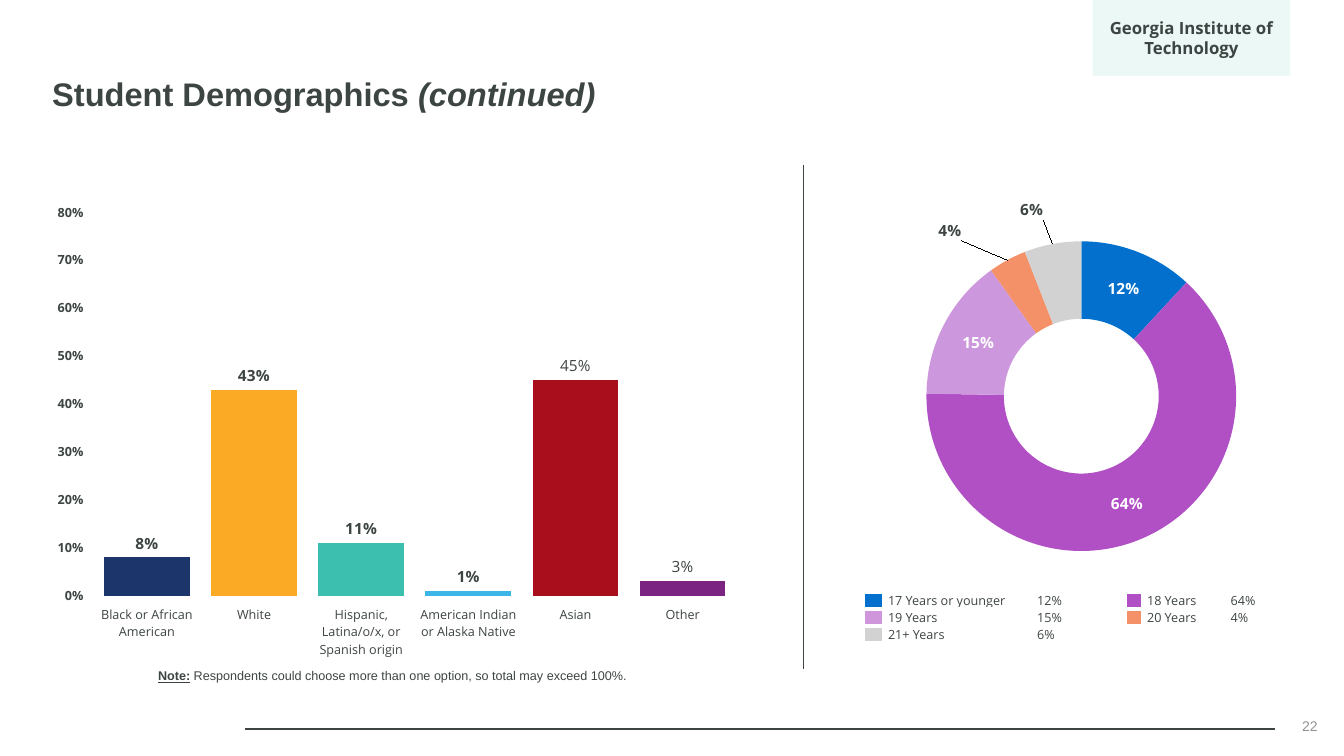
from dataclasses import dataclass, field

from lxml.etree import SubElement
from pptx import Presentation
from pptx.chart.data import CategoryChartData
from pptx.dml.color import RGBColor
from pptx.enum.chart import XL_CHART_TYPE as ChartType, XL_LABEL_POSITION as LabelPlace
from pptx.enum.shapes import MSO_CONNECTOR as Connector, MSO_SHAPE as Preset
from pptx.enum.text import MSO_ANCHOR as Anchor, MSO_AUTO_SIZE as AutoSize, PP_ALIGN as Align
from pptx.oxml import parse_xml
from pptx.oxml.ns import nsdecls, qn
from pptx.util import Inches, Pt

COLORS = {
    "ink": "3D4542", "footer": "3D4543", "number": "929493", "white": "FFFFFF",
    "mint": "3CC0AF", "navy": "1C356B", "gold": "FBAA26", "teal": "3CBFAE",
    "sky": "3CB6E6", "red": "A90E1C", "plum": "7B2481", "blue": "0370CD",
    "purple": "B150C4", "lilac": "CC97DC", "lilac_key": "D096DC",
    "orange": "F59168", "gray": "D2D2D2",
}
SANS = "Open Sans"
ARIAL = "Arial"
CELL = Inches(0.1)


@dataclass
class Area:
    left: float
    top: float
    width: float
    height: float

    def emu(self) -> tuple:
        return tuple(grid(n) for n in (self.left, self.top, self.width, self.height))


@dataclass
class Span:
    text: str
    bold: bool | None = None
    italic: bool | None = None
    underline: bool | None = None


@dataclass
class Caption:
    area: Area
    spans: list
    size: float
    color: str = "ink"
    bold: bool = False
    align: Align = Align.LEFT
    anchor: Anchor = Anchor.TOP
    spacing: float = 1.0


@dataclass
class Rule:
    start: tuple
    end: tuple
    color: str
    weight: float


@dataclass
class Slice:
    name: str
    value: float
    color: str
    label_color: str = "white"
    bold: bool = True
    shift: tuple = ()


@dataclass
class Graph:
    kind: ChartType
    area: Area
    plot: tuple
    slices: list = field(default_factory=list)


@dataclass
class Key:
    color: str
    name: str
    share: str


def grid(count: float) -> int:
    return round(count * CELL)


def rgb(name: str) -> RGBColor:
    return RGBColor.from_string(COLORS[name])


def set_font(font, face: str, size: float, color: str = "ink", bold: bool = False) -> None:
    font.name, font.size, font.bold = face, Pt(size), bold
    font.color.rgb = rgb(color)


def add_caption(page, caption: Caption) -> None:
    box = page.shapes.add_textbox(*caption.area.emu())
    frame = box.text_frame
    frame.word_wrap = True
    frame.auto_size = AutoSize.NONE
    frame.vertical_anchor = caption.anchor
    para = frame.paragraphs[0]
    para.alignment, para.line_spacing = caption.align, caption.spacing
    set_font(para.font, ARIAL, caption.size, caption.color, caption.bold)
    for span in caption.spans:
        run = para.add_run()
        run.text = span.text
        for trait in ("bold", "italic", "underline"):
            if getattr(span, trait) is not None:
                setattr(run.font, trait, getattr(span, trait))


def add_rule(page, rule: Rule) -> None:
    ends = [grid(n) for n in rule.start + rule.end]
    line = page.shapes.add_connector(Connector.STRAIGHT, *ends)
    line.line.color.rgb = rgb(rule.color)
    line.line.width = Pt(rule.weight)
    SubElement(line._element.spPr, qn("a:effectLst"))


def add_badge(page, area: Area, text: str) -> None:
    badge = page.shapes.add_shape(Preset.RECTANGLE, *area.emu())
    badge.shadow.inherit = False
    badge.line.fill.background()
    badge.fill.solid()
    badge.fill.fore_color.rgb = rgb("mint")
    SubElement(badge._element.spPr.find(".//" + qn("a:srgbClr")), qn("a:alpha"), val="10000")
    frame = badge.text_frame
    frame.word_wrap = True
    frame.vertical_anchor = Anchor.MIDDLE
    frame.margin_top = frame.margin_bottom = 0
    para = frame.paragraphs[0]
    para.text, para.alignment = text, Align.CENTER
    set_font(para.font, SANS, 12, bold=True)


def layout_xml(position: dict, inner: bool = False):
    target = '<c:layoutTarget val="inner"/>' if inner else ""
    modes = '<c:xMode val="edge"/><c:yMode val="edge"/>' if inner else ""
    values = "".join(f'<c:{key} val="{value}"/>' for key, value in position.items())
    return parse_xml(f'<c:layout {nsdecls("c")}><c:manualLayout>{target}{modes}{values}'
                     "</c:manualLayout></c:layout>")


def add_graph(page, graph: Graph):
    data = CategoryChartData(number_format="0%")
    data.categories = [part.name for part in graph.slices]
    data.add_series("Series 1", [part.value for part in graph.slices])
    chart = page.shapes.add_chart(graph.kind, *graph.area.emu(), data).chart
    chart.has_title = chart.has_legend = False
    set_font(chart.font, SANS, 9)
    columns = graph.kind == ChartType.COLUMN_CLUSTERED
    chart.plots[0].vary_by_categories = not columns
    series = chart.plots[0].series[0]
    labels = series.data_labels
    labels.show_value = True
    labels.number_format, labels.number_format_is_linked = "0%", False
    set_font(labels.font, SANS, 11, "ink" if columns else "white", True)
    if columns:
        labels.position = LabelPlace.OUTSIDE_END
    for index, part in enumerate(graph.slices):
        point = series.points[index]
        point.format.fill.solid()
        point.format.fill.fore_color.rgb = rgb(part.color)
        set_font(point.data_label.font, SANS, 11, part.label_color, part.bold)
        if columns:
            point.data_label.position = LabelPlace.OUTSIDE_END
        if part.shift:
            label = chart._chartSpace.xpath(f".//c:ser/c:dLbls/c:dLbl[c:idx/@val={index}]")[0]
            label.insert(1, layout_xml(dict(zip("xy", part.shift))))
    area = chart._chartSpace.chart.plotArea
    for old in area.findall(qn("c:layout")):
        area.remove(old)
    area.insert(0, layout_xml(dict(zip("xywh", graph.plot)), inner=True))
    return chart


def style_axes(chart) -> None:
    chart.plots[0].gap_width = 25
    values = chart.value_axis
    values.minimum_scale, values.maximum_scale, values.major_unit = 0, 0.8, 0.1
    values.has_major_gridlines = False
    values.tick_labels.number_format = "0%"
    values.tick_labels.number_format_is_linked = False
    for axis, bold in ((values, True), (chart.category_axis, False)):
        axis.format.line.fill.background()
        set_font(axis.tick_labels.font, SANS, 9, bold=bold)


def add_legend(page, area: Area, widths: tuple, rows: list) -> None:
    table = page.shapes.add_table(len(rows), len(widths), *area.emu()).table
    table.first_row = table.horz_banding = False
    for column, width in zip(table.columns, widths):
        column.width = grid(width)
    for row_index, keys in enumerate(rows):
        table.rows[row_index].height = grid(area.height / len(rows))
        entries = [entry for key in keys for entry in (key.color, key.name, key.share)]
        for index, entry in enumerate(entries):
            cell = table.cell(row_index, index)
            kind = index % 3
            cell.margin_top = cell.margin_bottom = cell.margin_right = 0
            cell.margin_left = grid((0, 0.5, 0.3)[kind])
            para = cell.text_frame.paragraphs[0]
            if kind and entry:
                para.text = entry
            else:
                SubElement(para._p, qn("a:endParaRPr"), sz="900")
            set_font(para.font, SANS, 9)
            cell.fill.background()
            if kind == 0:
                cell.fill.solid()
                cell.fill.fore_color.rgb = rgb(entry)
            for place, side in enumerate(("lnT", "lnB")):
                cell._tc.get_or_add_tcPr().insert(place, parse_xml(
                    f'<a:{side} {nsdecls("a")} w="38100"><a:solidFill>'
                    f'<a:srgbClr val="{COLORS["white"]}"/></a:solidFill></a:{side}>'))


ETHNICITY = Graph(ChartType.COLUMN_CLUSTERED, Area(1.7, 13.8, 73.4, 55.1), (0.103, 0.132, 0.869, 0.69), [
    Slice("Black or African American", 0.08, "navy", "ink"),
    Slice("White", 0.43, "gold", "ink"),
    Slice("Hispanic, Latina/o/x, or Spanish origin", 0.11, "teal", "ink"),
    Slice("American Indian or Alaska Native", 0.01, "sky", "ink"),
    Slice("Asian", 0.45, "red", "ink", False),
    Slice("Other", 0.03, "plum", "ink", False),
])
AGES = Graph(ChartType.DOUGHNUT, Area(87, 14.1, 39.6, 42.3), (0.124, 0.196, 0.776, 0.8), [
    Slice("1", 0.12, "blue"),
    Slice("2", 0.64, "purple"),
    Slice("3", 0.15, "lilac"),
    Slice("4", 0.04, "orange", "ink", shift=(-0.19, -0.15)),
    Slice("5", 0.06, "gray", "ink", shift=(-0.07, -0.17)),
])
AGE_KEYS = [
    [Key("blue", "17 Years or younger", "12%"), Key("purple", "18 Years", "64%")],
    [Key("lilac_key", "19 Years", "15%"), Key("orange", "20 Years", "4%")],
    [Key("gray", "21+ Years", "6%"), Key("white", "", "")],
]
RULES = [Rule((126.5, 72.3), (24.3, 72.3), "footer", 1.5), Rule((79.7, 16.4), (79.7, 66.4), "ink", 1)]
CAPTIONS = [
    Caption(Area(101.7, 70, 30, 4), [Span("22")], 10, "number", align=Align.RIGHT, anchor=Anchor.MIDDLE),
    Caption(Area(4.2, 6, 118.3, 7), [Span("Student Demographics "), Span("(continued)", italic=True)],
            23.3, bold=True, anchor=Anchor.MIDDLE, spacing=0.9),
    Caption(Area(14.7, 65.8, 50.7, 2.5), [
        Span("Note:", bold=True, underline=True),
        Span(" Respondents could choose more than one option, so total may exceed 100%."),
    ], 9),
]


def main() -> None:
    deck = Presentation()
    deck.slide_width, deck.slide_height = grid(133.33), grid(75)
    page = deck.slides.add_slide(deck.slide_layouts[6])
    for rule in RULES:
        add_rule(page, rule)
    add_legend(page, Area(85.8, 58.7, 43.5, 5.1), (1.8, 15, 9.1, 1.6, 8.5, 7.5), AGE_KEYS)
    add_graph(page, AGES)
    style_axes(add_graph(page, ETHNICITY))
    for caption in CAPTIONS:
        add_caption(page, caption)
    add_badge(page, Area(108.4, 0, 19.6, 7.5), "Georgia Institute of Technology")
    deck.save("out.pptx")


if __name__ == "__main__":
    main()
